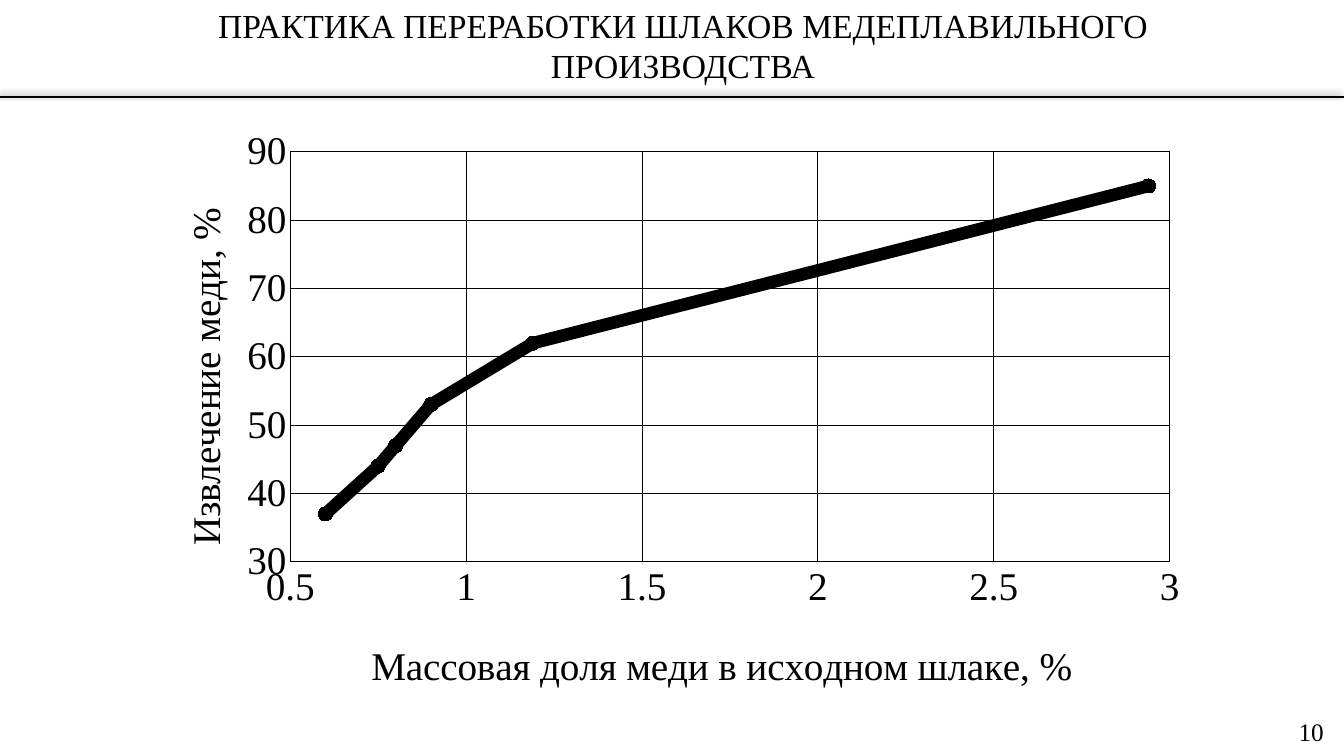
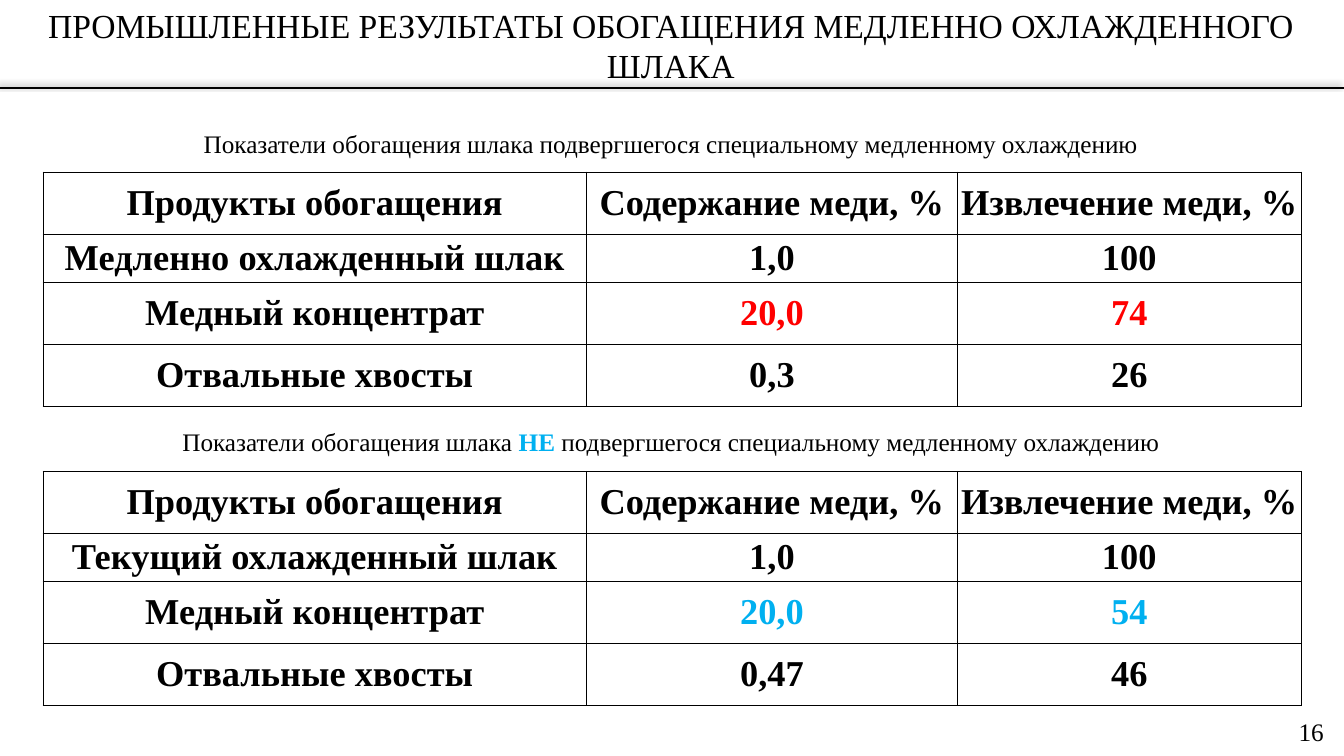
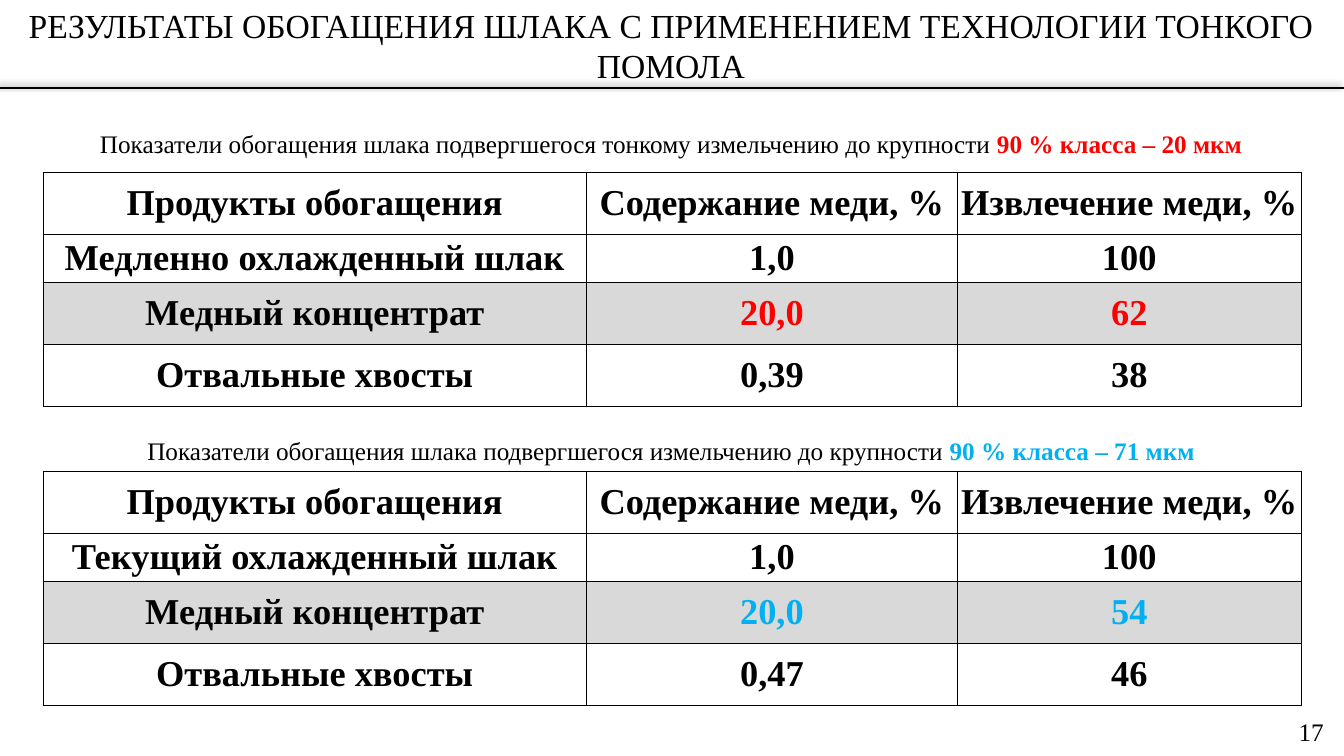
"""Builds three slides on copper slag processing: one chart and two table comparisons."""
from lxml import etree
from pptx import Presentation
from pptx.chart.data import XyChartData
from pptx.dml.color import RGBColor
from pptx.enum.chart import XL_AXIS_CROSSES, XL_CHART_TYPE, XL_MARKER_STYLE, XL_TICK_MARK
from pptx.enum.shapes import MSO_CONNECTOR
from pptx.enum.text import MSO_ANCHOR, PP_ALIGN
from pptx.oxml.ns import qn
from pptx.util import Cm, Pt

BLACK = RGBColor(0x00, 0x00, 0x00)
WHITE = RGBColor(0xFF, 0xFF, 0xFF)
RED = RGBColor(0xFF, 0x00, 0x00)
BLUE = RGBColor(0x00, 0xB0, 0xF0)
GREY = RGBColor(0xD9, 0xD9, 0xD9)
FONT = "Times New Roman"
CENTER, RIGHT = PP_ALIGN.CENTER, PP_ALIGN.RIGHT
MIDDLE = MSO_ANCHOR.MIDDLE
STRAIGHT = MSO_CONNECTOR.STRAIGHT
SCATTER = XL_CHART_TYPE.XY_SCATTER_SMOOTH
CIRCLE = XL_MARKER_STYLE.CIRCLE
NO_TICK = XL_TICK_MARK.NONE
AT_MINIMUM = XL_AXIS_CROSSES.MINIMUM

WIDTH, HEIGHT = 33.87, 19.05
COLUMNS = (13.69, 9.35, 8.66)
ROWS = (1.56, 1.22, 1.56, 1.56)
TABLE_LEFT = 1.09
TABLE_TOPS = (4.34, 11.88)

RECOVERY_TITLE = "ПРАКТИКА ПЕРЕРАБОТКИ ШЛАКОВ МЕДЕПЛАВИЛЬНОГО ПРОИЗВОДСТВА"
RECOVERY = [(0.6, 37), (0.75, 44), (0.8, 47), (0.9, 53), (1.19, 62), (2.94, 85)]
SHARE_AXIS = dict(title="Массовая доля меди в исходном шлаке, %",
                  low=0.5, high=3, step=0.5, place=(0.21, 0.88), turn=0)
RECOVERY_AXIS = dict(title="Извлечение меди, %",
                     low=30, high=90, step=10, place=(0.03, 0.14), turn=-90)
PLOT_AREA = (0.14, 0.056, 0.831, 0.7)

HEADINGS = ("Продукты обогащения", "Содержание меди, %", "Извлечение меди, %")
SLOW, CURRENT = "Медленно охлажденный шлак", "Текущий охлажденный шлак"
COMPARISONS = [
    dict(title="ПРОМЫШЛЕННЫЕ РЕЗУЛЬТАТЫ ОБОГАЩЕНИЯ МЕДЛЕННО ОХЛАЖДЕННОГО ШЛАКА",
         number=16, band=WHITE, tables=[
             dict(caption=["Показатели обогащения шлака подвергшегося специальному "
                           "медленному охлаждению"],
                  caption_top=3.12, slag=SLOW, accent=RED, recovery="74", tailings=("0,3", "26")),
             dict(caption=["Показатели обогащения шлака ", ("НЕ", BLUE),
                           " подвергшегося специальному медленному охлаждению"],
                  caption_top=10.62, slag=CURRENT, accent=BLUE, recovery="54",
                  tailings=("0,47", "46"))]),
    dict(title="РЕЗУЛЬТАТЫ ОБОГАЩЕНИЯ ШЛАКА С ПРИМЕНЕНИЕМ ТЕХНОЛОГИИ ТОНКОГО ПОМОЛА",
         number=17, band=GREY, tables=[
             dict(caption=["Показатели обогащения шлака подвергшегося тонкому измельчению "
                           "до крупности ", ("90 % класса – 20 мкм", RED)],
                  caption_top=3.12, slag=SLOW, accent=RED, recovery="62", tailings=("0,39", "38")),
             dict(caption=["Показатели обогащения шлака подвергшегося измельчению "
                           "до крупности ", ("90 % класса – 71 мкм", BLUE)],
                  caption_top=10.85, slag=CURRENT, accent=BLUE, recovery="54",
                  tailings=("0,47", "46"))]),
]


def write(frame, pieces, size=18, color=BLACK, bold=False, align=CENTER):
    """Fills a text frame; a (text, colour) piece is a bold accent."""
    paragraph = frame.paragraphs[0]
    paragraph.alignment = align
    for piece in pieces:
        accented = isinstance(piece, tuple)
        run = paragraph.add_run()
        run.text = piece[0] if accented else piece
        run.font.name, run.font.size = FONT, Pt(size)
        run.font.bold = bold or accented
        run.font.color.rgb = piece[1] if accented else color


def add_text(slide, box, pieces, **style):
    """Adds a wrapping text box placed in centimetres."""
    frame = slide.shapes.add_textbox(*map(Cm, box)).text_frame
    frame.word_wrap = True
    write(frame, pieces, **style)


def add_rule(slide, top):
    """Adds the shadowed line under the title."""
    rule = slide.shapes.add_connector(STRAIGHT, 0, Cm(top), Cm(WIDTH), Cm(top))
    rule.line.color.rgb, rule.line.width = BLACK, Pt(1.5)
    effects = etree.SubElement(rule._element.spPr, qn("a:effectLst"))
    shadow = etree.SubElement(effects, qn("a:outerShdw"), blurRad=str(Pt(4)),
                              dist=str(Pt(3)), dir=str(225 * 60000), rotWithShape="0")
    tint = etree.SubElement(shadow, qn("a:srgbClr"), val=str(BLACK))
    etree.SubElement(tint, qn("a:alpha"), val="40000")


def start_slide(deck, title, number, title_box, rule_top):
    """Adds a blank slide with rule, title and page number."""
    slide = deck.slides.add_slide(deck.slide_layouts[6])
    add_rule(slide, rule_top)
    add_text(slide, title_box, [title], size=24)
    add_text(slide, (32.16, 17.93, 1.45, 1.02), [str(number)], align=RIGHT)
    return slide


def place(element, values, inner=False):
    """Gives a chart part a manual layout in fractions of the chart."""
    for old in element.findall(qn("c:layout")):
        element.remove(old)
    layout = etree.Element(qn("c:layout"))
    manual = etree.SubElement(layout, qn("c:manualLayout"))
    if inner:
        etree.SubElement(manual, qn("c:layoutTarget"), val="inner")
    for mode in ("xMode", "yMode"):
        etree.SubElement(manual, qn(f"c:{mode}"), val="edge")
    for key, value in zip("xywh", values):
        etree.SubElement(manual, qn(f"c:{key}"), val=str(value))
    element.insert(0 if inner else 1, layout)


def format_axis(axis, content):
    """Applies scale, grid and title to one axis."""
    axis.minimum_scale, axis.maximum_scale = content["low"], content["high"]
    axis.major_unit = content["step"]
    axis.major_tick_mark = axis.minor_tick_mark = NO_TICK
    axis.crosses = AT_MINIMUM
    axis.has_major_gridlines = True
    for line in (axis.format.line, axis.major_gridlines.format.line):
        line.color.rgb, line.width = BLACK, Pt(0.5)
    axis.tick_labels.number_format = "General"
    axis.tick_labels.number_format_is_linked = False
    frame = axis.axis_title.text_frame
    write(frame, [content["title"]], size=28)
    body = frame._txBody.find(qn("a:bodyPr"))
    body.set("rot", str(content["turn"] * 60000))
    body.set("vert", "horz")
    place(axis.axis_title._element, content["place"])


def add_recovery_chart(slide):
    """Adds the curve of copper recovery against copper share."""
    data = XyChartData()
    points = data.add_series(RECOVERY_AXIS["title"])
    for share, recovery in RECOVERY:
        points.add_data_point(share, recovery)
    box = map(Cm, (3.58, 3, 26.67, 14.76))
    chart = slide.shapes.add_chart(SCATTER, *box, data).chart
    chart.has_title = chart.has_legend = False
    chart.font.name, chart.font.size, chart.font.color.rgb = FONT, Pt(28), BLACK
    plot = chart.plots[0]
    plot.vary_by_categories = False
    curve = plot.series[0]
    curve.smooth = True
    curve.format.line.color.rgb, curve.format.line.width = BLACK, Pt(9)
    marker = curve.marker
    marker.style, marker.size = CIRCLE, 10
    marker.format.fill.solid()
    marker.format.fill.fore_color.rgb = BLACK
    marker.format.line.color.rgb = BLACK
    format_axis(chart.category_axis, SHARE_AXIS)
    format_axis(chart.value_axis, RECOVERY_AXIS)
    place(chart._chartSpace.chart.plotArea, PLOT_AREA, inner=True)


def format_cell(cell, text, color, fill):
    """Writes one bordered table cell."""
    cell.margin_left = cell.margin_right = Cm(0.05)
    cell.margin_top = cell.margin_bottom = 0
    cell.vertical_anchor = MIDDLE
    cell.fill.solid()
    cell.fill.fore_color.rgb = fill
    write(cell.text_frame, [text], size=26, color=color, bold=True)
    properties = cell._tc.get_or_add_tcPr()
    for index, side in enumerate(("lnL", "lnR", "lnT", "lnB")):
        border = etree.Element(qn(f"a:{side}"), w=str(Pt(1)))
        solid = etree.SubElement(border, qn("a:solidFill"))
        etree.SubElement(solid, qn("a:srgbClr"), val=str(BLACK))
        properties.insert(index, border)


def add_results(slide, top, content, band):
    """Adds one captioned table of enrichment results."""
    add_text(slide, (1.05, content["caption_top"], 31.72, 1.02), content["caption"])
    rows = [HEADINGS, (content["slag"], "1,0", "100"),
            ("Медный концентрат", "20,0", content["recovery"]),
            ("Отвальные хвосты", *content["tailings"])]
    table = slide.shapes.add_table(len(ROWS), len(COLUMNS), Cm(TABLE_LEFT), Cm(top),
                                   Cm(sum(COLUMNS)), Cm(sum(ROWS))).table
    table.first_row = table.horz_banding = False
    for column, width in zip(table.columns, COLUMNS):
        column.width = Cm(width)
    for r, (row, height) in enumerate(zip(rows, ROWS)):
        table.rows[r].height = Cm(height)
        concentrate = r == 2
        for c, text in enumerate(row):
            color = content["accent"] if concentrate and c else BLACK
            format_cell(table.cell(r, c), text, color, band if concentrate else WHITE)


def main():
    """Builds and saves the deck."""
    deck = Presentation()
    deck.slide_width, deck.slide_height = Cm(WIDTH), Cm(HEIGHT)
    slide = start_slide(deck, RECOVERY_TITLE, 10, (3.94, 0, 26.54, 2.31), 2.44)
    add_recovery_chart(slide)
    for content in COMPARISONS:
        slide = start_slide(deck, content["title"], content["number"],
                            (0.46, 0, 32.89, 2.31), 2.21)
        for top, results in zip(TABLE_TOPS, content["tables"]):
            add_results(slide, top, results, content["band"])
    deck.save("out.pptx")


if __name__ == "__main__":
    main()
